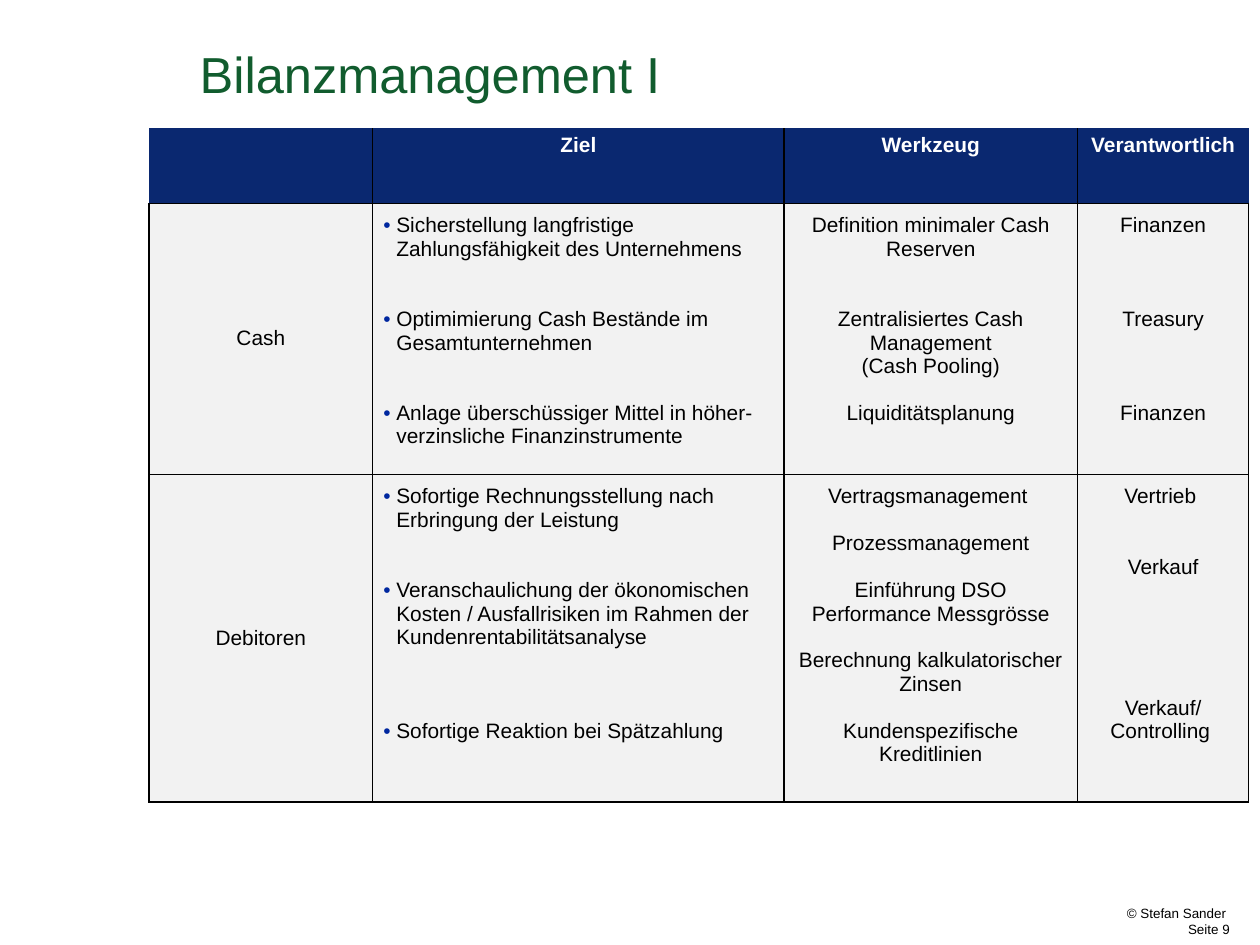
from lxml.etree import SubElement
from pptx import Presentation
from pptx.dml.color import RGBColor
from pptx.enum.text import MSO_ANCHOR, PP_ALIGN
from pptx.oxml.ns import qn
from pptx.util import Inches, Pt

COLORS = {
    "title": "115C2E", "header": "0A2870", "header_text": "FFFFFF",
    "body": "F2F2F2", "text": "000000", "line": "000000", "bullet": "00279F",
}
FONT = "Arial"
WIDTH, HEIGHT = 11.76, 8.82
LINE_HEIGHT = 15.8  # points taken by one line of 14 pt text

COLUMN_WEIGHTS = [2.09, 3.84, 2.74, 1.6]
ROW_WEIGHTS = [0.7, 2.53, 3.06]
HEADINGS = ["", "Ziel", "Werkzeug", "Verantwortlich"]

# Each entry: number of free lines above, text
TOPICS = {
    "Cash": [
        [(0, "Sicherstellung langfristige Zahlungsfähigkeit des Unternehmens"),
         (2, "Optimimierung Cash Bestände im Gesamtunternehmen"),
         (2, "Anlage überschüssiger Mittel in höher- verzinsliche Finanzinstrumente")],
        [(0, "Definition minimaler Cash Reserven"),
         (2, "Zentralisiertes Cash Management"),
         (0, "(Cash Pooling)"),
         (1, "Liquiditätsplanung")],
        [(0, "Finanzen"), (3, "Treasury"), (3, "Finanzen")],
    ],
    "Debitoren": [
        [(0, "Sofortige Rechnungsstellung nach Erbringung der Leistung"),
         (2, "Veranschaulichung der ökonomischen Kosten / Ausfallrisiken "
             "im Rahmen der Kundenrentabilitätsanalyse"),
         (3, "Sofortige Reaktion bei Spätzahlung")],
        [(0, "Vertragsmanagement "),
         (1, "Prozessmanagement"),
         (1, "Einführung DSO Performance Messgrösse"),
         (1, "Berechnung kalkulatorischer Zinsen"),
         (1, "Kundenspezifische Kreditlinien")],
        [(0, "Vertrieb "), (2, "Verkauf"), (5, "Verkauf/Controlling ")],
    ],
}


def box(left, top, width, height):
    """Turn percentages of the slide into left, top, width, height."""
    return (Inches(WIDTH * left / 100), Inches(HEIGHT * top / 100),
            Inches(WIDTH * width / 100), Inches(HEIGHT * height / 100))


def color(name):
    return RGBColor.from_string(COLORS[name])


def style_font(paragraph, size, color_name, bold=False):
    font = paragraph.font
    font.name, font.size, font.bold = FONT, Pt(size), bold
    font.color.rgb = color(color_name)


def add_bullet(paragraph):
    properties = paragraph._p.get_or_add_pPr()
    properties.set("marL", str(Inches(0.12)))
    properties.set("indent", str(-Inches(0.12)))
    bullet_color = SubElement(properties, qn("a:buClr"))
    SubElement(bullet_color, qn("a:srgbClr"), val=COLORS["bullet"])
    SubElement(properties, qn("a:buFont"), typeface=FONT)
    SubElement(properties, qn("a:buChar"), char="•")


def set_borders(cell, visible_sides):
    properties = cell._tc.get_or_add_tcPr()
    for position, side in enumerate("LRTB"):
        line = SubElement(properties, qn(f"a:ln{side}"), w=str(Pt(1)))
        if side in visible_sides:
            fill = SubElement(line, qn("a:solidFill"))
            SubElement(fill, qn("a:srgbClr"), val=COLORS["line"])
        else:
            SubElement(line, qn("a:noFill"))
        properties.insert(position, line)  # lines come before the cell fill


def fill_cell(cell, entries, fill_name, text_name, bold=False, bulleted=False):
    cell.fill.solid()
    cell.fill.fore_color.rgb = color(fill_name)
    frame = cell.text_frame
    for index, (free_lines, text) in enumerate(entries):
        paragraph = frame.add_paragraph() if index else frame.paragraphs[0]
        paragraph.text = text
        paragraph.space_before = Pt(free_lines * LINE_HEIGHT)
        if bulleted:
            add_bullet(paragraph)
        else:
            paragraph.alignment = PP_ALIGN.CENTER
        style_font(paragraph, 14, text_name, bold)


def add_title(slide, area):
    title = slide.shapes.title
    title.left, title.top, title.width, title.height = area
    frame = title.text_frame
    frame.text = "Bilanzmanagement I"
    frame.vertical_anchor = MSO_ANCHOR.TOP
    paragraph = frame.paragraphs[0]
    paragraph.alignment = PP_ALIGN.LEFT
    paragraph.line_spacing = 0.85
    style_font(paragraph, 34, "title")


def add_topic_table(slide, area):
    table = slide.shapes.add_table(
        len(ROW_WEIGHTS), len(COLUMN_WEIGHTS), *area).table
    table.horz_banding = False
    for column, weight in zip(table.columns, COLUMN_WEIGHTS):
        column.width = int(area[2] * weight / sum(COLUMN_WEIGHTS))
    for row, weight in zip(table.rows, ROW_WEIGHTS):
        row.height = int(area[3] * weight / sum(ROW_WEIGHTS))

    # Header row: no outer lines
    last = len(HEADINGS) - 1
    for index, heading in enumerate(HEADINGS):
        cell = table.cell(0, index)
        fill_cell(cell, [(0, heading)], "header", "header_text", bold=True)
        set_borders(cell, "B" + "L" * (index > 0) + "R" * (index < last))

    # One row per topic
    for row_index, (topic, columns) in enumerate(TOPICS.items(), start=1):
        for index, entries in enumerate([[(0, topic)], *columns]):
            cell = table.cell(row_index, index)
            fill_cell(cell, entries, "body", "text", bulleted=index == 1)
            cell.margin_left = cell.margin_right = Inches(0.1)
            cell.margin_top = cell.margin_bottom = Inches(0.1)
            if index == 0:
                cell.vertical_anchor = MSO_ANCHOR.MIDDLE
            set_borders(cell, "LRTB")


def add_footer(slide, area):
    frame = slide.shapes.add_textbox(*area).text_frame
    frame.word_wrap = True
    frame.margin_left = frame.margin_right = 0
    frame.margin_top = frame.margin_bottom = 0
    frame.text = "© Stefan Sander \n Seite 9"
    for paragraph in frame.paragraphs:
        paragraph.alignment = PP_ALIGN.RIGHT
        style_font(paragraph, 9, "text")


def main():
    presentation = Presentation()
    presentation.slide_width = Inches(WIDTH)
    presentation.slide_height = Inches(HEIGHT)
    title_only = presentation.slide_layouts[5]
    slide = presentation.slides.add_slide(title_only)
    add_footer(slide, box(40.6, 95.8, 57, 3.4))
    add_title(slide, box(15, 5, 81, 12))
    add_topic_table(slide, box(11.82, 13.57, 87.3, 71.3))
    presentation.save("out.pptx")


if __name__ == "__main__":
    main()
